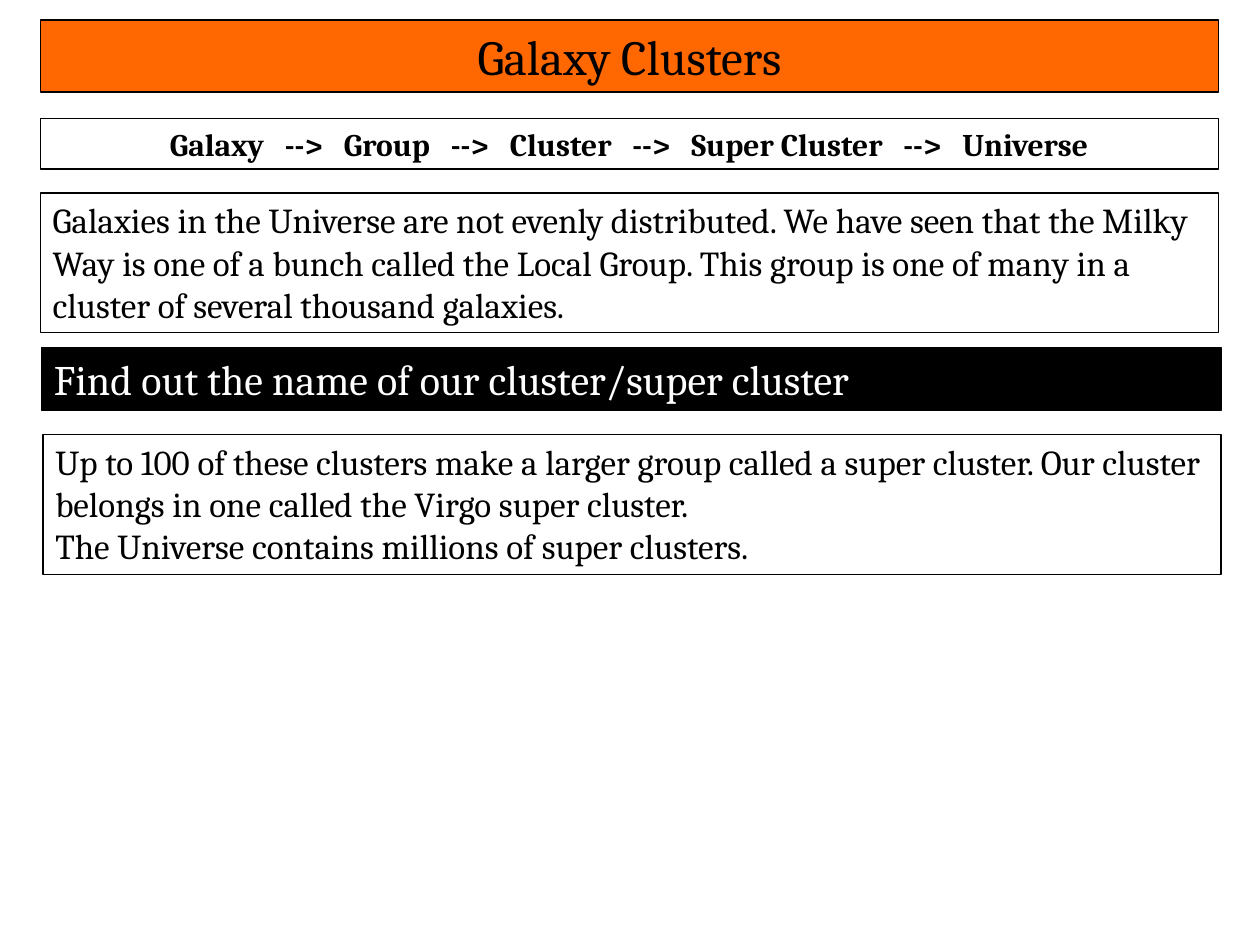
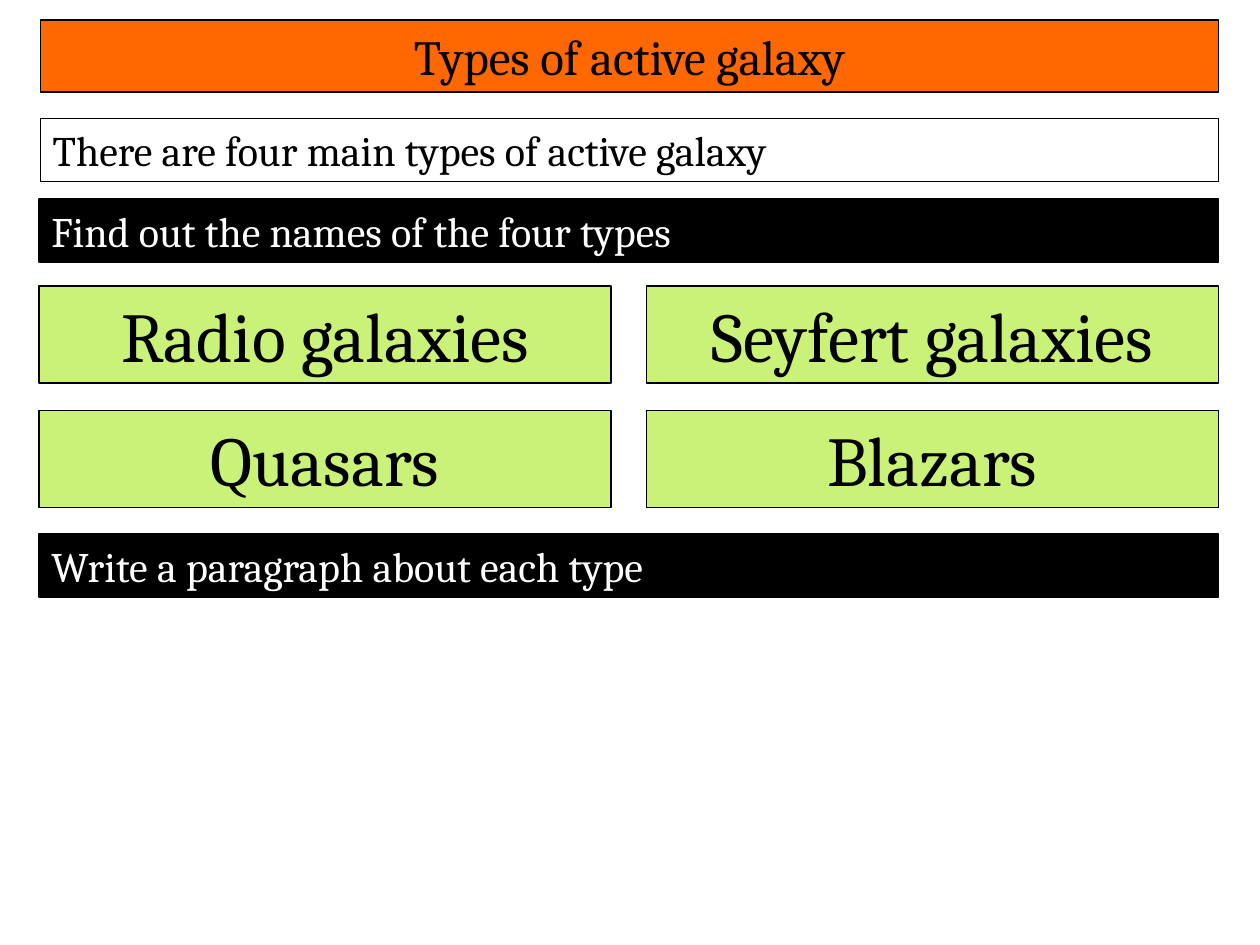
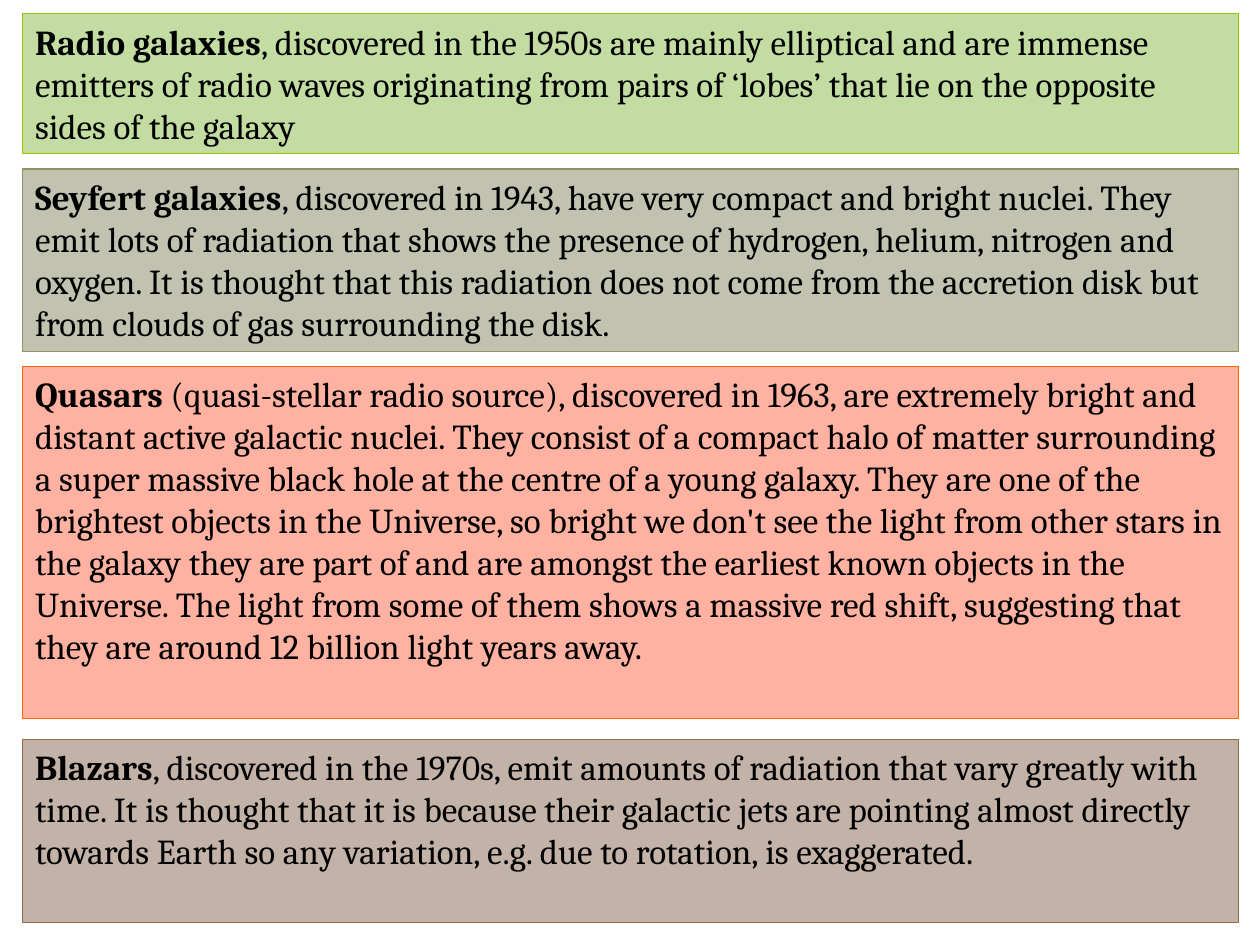
from pptx import Presentation
from pptx.dml.color import RGBColor
from pptx.enum.shapes import MSO_SHAPE
from pptx.enum.text import MSO_ANCHOR, PP_ALIGN
from pptx.util import Inches, Pt

BLACK = RGBColor(0x00, 0x00, 0x00)
WHITE = RGBColor(0xFF, 0xFF, 0xFF)
ORANGE = RGBColor(0xFF, 0x67, 0x00)
LIME = RGBColor(0xCA, 0xF2, 0x78)
GREEN = RGBColor(0xC2, 0xDC, 0xA2)
LEAF = RGBColor(0x94, 0xC6, 0x00)
SAGE = RGBColor(0xC1, 0xC2, 0xB0)
OLIVE = RGBColor(0x90, 0x94, 0x65)
PINK = RGBColor(0xFF, 0xB1, 0xA2)
TAUPE = RGBColor(0xC3, 0xB2, 0xA7)
BROWN = RGBColor(0x95, 0x6B, 0x43)

FONT = "Cambria"
LEFT, WIDTH = 0.32, 9.35

CHAIN = ["Galaxy", "Group", "Cluster", "Super Cluster", "Universe"]
ARROW = "   -->   "

TYPES = ["Radio galaxies", "Seyfert galaxies", "Quasars", "Blazars"]

# top, height, fill, line, bold lead, rest
NOTES = [
    (0.11, 1.11, GREEN, LEAF, "Radio galaxies",
     ", discovered in the 1950s are mainly elliptical and are immense "
     "emitters of radio waves originating from pairs of ‘lobes’ that lie on "
     "the opposite sides of the galaxy"),
    (1.34, 1.45, SAGE, OLIVE, "Seyfert galaxies",
     ", discovered in 1943, have very compact and bright nuclei. They emit "
     "lots of radiation that shows the presence of hydrogen, helium, "
     "nitrogen and oxygen. It is thought that this radiation does not come "
     "from the accretion disk but from clouds of gas surrounding the disk."),
    (2.91, 2.79, PINK, ORANGE, "Quasars ",
     "(quasi-stellar radio source), discovered in 1963, are extremely bright "
     "and distant active galactic nuclei. They consist of a compact halo of "
     "matter surrounding a super massive black hole at the centre of a young "
     "galaxy. They are one of the brightest objects in the Universe, so "
     "bright we don't see the light from other stars in the galaxy they are "
     "part of and are amongst the earliest known objects in the Universe. "
     "The light from some of them shows a massive red shift, suggesting that "
     "they are around 12 billion light years away."),
    (5.87, 1.45, TAUPE, BROWN, "Blazars",
     ", discovered in the 1970s, emit amounts of radiation that vary greatly "
     "with time. It is thought that it is because their galactic jets are "
     "pointing almost directly towards Earth so any variation, e.g. due to "
     "rotation, is exaggerated."),
]


def panel(slide, box, paras, size, fill=WHITE, line=BLACK, weight=0.85,
          ink=BLACK, align=PP_ALIGN.LEFT):
    """Draw a framed box; each paragraph is a list of (text, bold) runs."""
    shape = slide.shapes.add_shape(MSO_SHAPE.RECTANGLE, *map(Inches, box))
    shape.shadow.inherit = False
    shape.fill.solid()
    shape.fill.fore_color.rgb = fill
    shape.line.color.rgb = line
    shape.line.width = Pt(weight)
    frame = shape.text_frame
    frame.word_wrap = True
    frame.vertical_anchor = MSO_ANCHOR.TOP
    for i, runs in enumerate(paras):
        para = frame.add_paragraph() if i else frame.paragraphs[0]
        para.alignment = align
        for text, bold in runs:
            run = para.add_run()
            run.text = text
            font = run.font
            font.name, font.size, font.bold = FONT, Pt(size), bold
            font.color.rgb = ink


def title(slide, text):
    panel(slide, (LEFT, 0.16, WIDTH, 0.57), [[(text, False)]], 28,
          fill=ORANGE, align=PP_ALIGN.CENTER)


def task(slide, left, top, text):
    """Draw a black band with an instruction for the class."""
    panel(slide, (left, top, 9.36, 0.5), [[(text, False)]], 24,
          fill=BLACK, ink=WHITE)


def body(slide, box, *lines, size=20):
    panel(slide, box, [[(text, False)] for text in lines], size)


def grid(slide, left, top, names):
    """Place the type names in two columns."""
    for i, name in enumerate(names):
        row, col = divmod(i, 2)
        box = (left + 4.82 * col, top + 0.99 * row, 4.54, 0.77)
        panel(slide, box, [[(name, False)]], 40, fill=LIME,
              align=PP_ALIGN.CENTER)


def clusters(slide):
    title(slide, "Galaxy Clusters")
    panel(slide, (LEFT, 0.94, WIDTH, 0.4), [[(ARROW.join(CHAIN), True)]], 18,
          align=PP_ALIGN.CENTER)
    body(slide, (LEFT, 1.53, WIDTH, 1.11),
         "Galaxies in the Universe are not evenly distributed. We have seen "
         "that the Milky Way is one of a bunch called the Local Group. This "
         "group is one of many in a cluster of several thousand galaxies.")
    task(slide, 0.33, 2.76, "Find out the name of our cluster/super cluster")
    body(slide, (0.34, 3.45, WIDTH, 1.11),
         "Up to 100 of these clusters make a larger group called a super "
         "cluster. Our cluster belongs in one called the Virgo super cluster.",
         "The Universe contains millions of super clusters.")


def active(slide):
    title(slide, "Types of active galaxy")
    body(slide, (LEFT, 0.94, WIDTH, 0.5),
         "There are four main types of active galaxy", size=24)
    task(slide, 0.31, 1.58, "Find out the names of the four types")
    grid(slide, 0.31, 2.27, TYPES)
    task(slide, 0.31, 4.24, "Write a paragraph about each type")


def notes(slide):
    for top, height, fill, line, lead, rest in NOTES:
        panel(slide, (0.18, top, 9.65, height),
              [[(lead, True), (rest, False)]], 20,
              fill=fill, line=line, weight=0.75)


def main():
    deck = Presentation()
    deck.slide_width, deck.slide_height = Inches(10), Inches(7.5)
    for build in (clusters, active, notes):
        build(deck.slides.add_slide(deck.slide_layouts[6]))
    deck.save("out.pptx")


if __name__ == "__main__":
    main()
